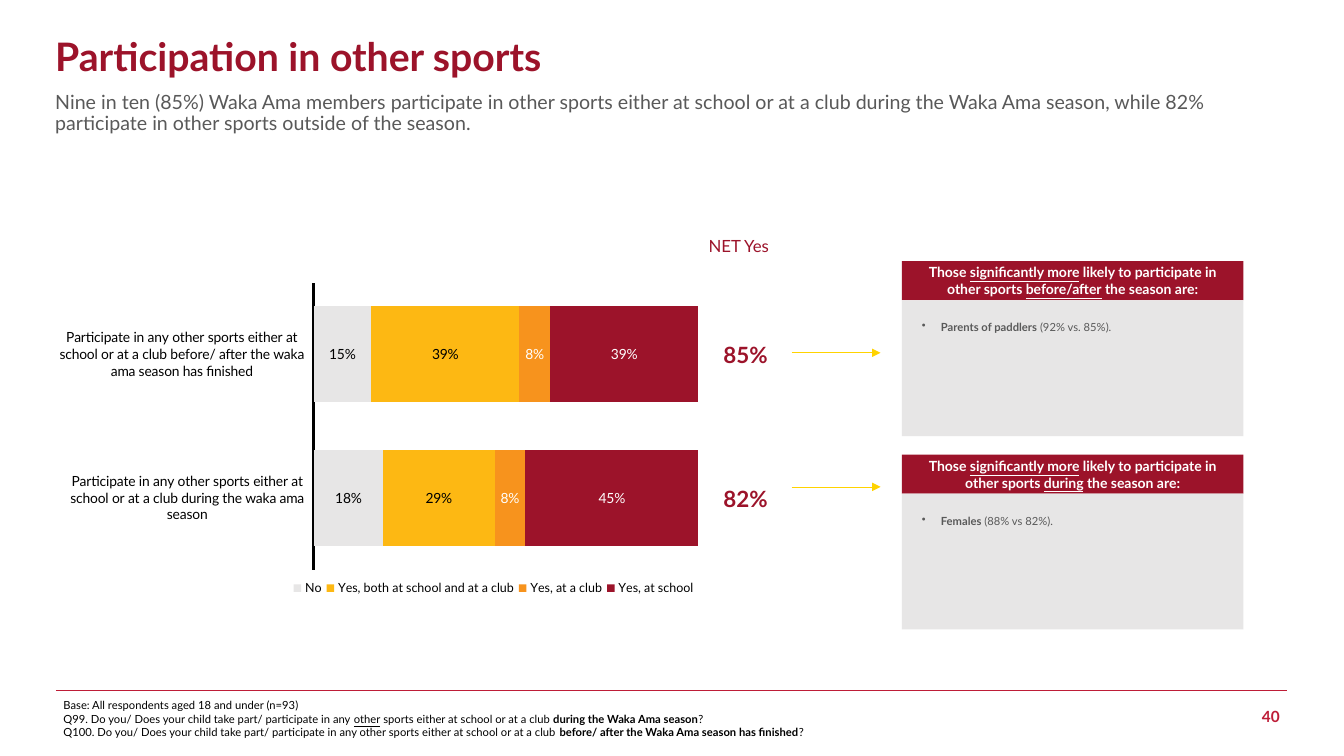
from lxml import etree
from pptx import Presentation
from pptx.chart.data import CategoryChartData
from pptx.dml.color import RGBColor
from pptx.enum.chart import XL_CHART_TYPE, XL_LABEL_POSITION, XL_LEGEND_POSITION, XL_TICK_LABEL_POSITION, XL_TICK_MARK
from pptx.enum.shapes import MSO_CONNECTOR, MSO_SHAPE
from pptx.enum.text import MSO_ANCHOR, PP_ALIGN
from pptx.oxml import parse_xml
from pptx.oxml.ns import nsdecls, qn
from pptx.util import Pt

LEFT, CENTER, RIGHT = PP_ALIGN.LEFT, PP_ALIGN.CENTER, PP_ALIGN.RIGHT
TOP, MIDDLE, BOTTOM = MSO_ANCHOR.TOP, MSO_ANCHOR.MIDDLE, MSO_ANCHOR.BOTTOM
CRIMSON = RGBColor(0x9C, 0x13, 0x2A)
RED = RGBColor(0xBE, 0x1D, 0x37)
GOLD = RGBColor(0xFD, 0xB8, 0x13)
ORANGE = RGBColor(0xF7, 0x93, 0x1D)
YELLOW = RGBColor(0xFF, 0xD3, 0x00)
LIGHT_GRAY = RGBColor(0xE7, 0xE6, 0xE6)
DARK_GRAY = RGBColor(0x59, 0x59, 0x59)
BLACK = RGBColor(0, 0, 0)
WHITE = RGBColor(0xFF, 0xFF, 0xFF)
FONT = "Lato"

presentation = Presentation()
presentation.slide_width, presentation.slide_height = Pt(960), Pt(540)
slide = presentation.slides.add_slide(presentation.slide_layouts[6])


def add_text(box, paragraphs, size, color, fill=None, align=LEFT, anchor=TOP, inset=(7.2, 3.6), bold=None):
    position = [Pt(value) for value in box]
    if fill is None:
        shape = slide.shapes.add_textbox(*position)
    else:
        shape = slide.shapes.add_shape(MSO_SHAPE.RECTANGLE, *position)
        shape.shadow.inherit = False
        shape.fill.solid()
        shape.fill.fore_color.rgb = fill
        shape.line.fill.background()
    frame = shape.text_frame
    frame.word_wrap = True
    frame.vertical_anchor = anchor
    frame.margin_left = frame.margin_right = Pt(inset[0])
    frame.margin_top = frame.margin_bottom = Pt(inset[1])
    for index, runs in enumerate(paragraphs):
        paragraph = frame.add_paragraph() if index else frame.paragraphs[0]
        paragraph.alignment = align
        style_font(paragraph.font, size, color, bold)
        for text, style in runs:
            if style == "break":
                paragraph.add_line_break()
                continue
            run = paragraph.add_run()
            run.text = text
            if style == "underline":
                run.font.underline = True
            elif style == "bold":
                run.font.bold = True
    return frame


def style_font(font, size, color, bold=None):
    font.name, font.size, font.bold = FONT, Pt(size), bold
    font.color.rgb = color


add_text((747, 502, 170, 19), [[("40", "")]], 11, RED, align=RIGHT, inset=(2.9, 2.9), bold=True)
footer_rule = slide.shapes.add_connector(MSO_CONNECTOR.STRAIGHT, Pt(40), Pt(493.2), Pt(919), Pt(493.2))
footer_rule.line.color.rgb = RED
footer_rule.line.width = Pt(1)

title = add_text((32.4, 1.4, 903, 59), [[("Participation in other sports", "")]], 28, CRIMSON, anchor=BOTTOM, bold=True)
title.paragraphs[0].line_spacing = 0.9
subtitle = add_text(
    (32.4, 62.6, 875.5, 52),
    [[("Nine in ten (85%) Waka Ama members participate in other sports either at school or at a club "
       "during the Waka Ama season, while 82% participate in other sports outside of the season.", "")]],
    14, DARK_GRAY)
subtitle.paragraphs[0].line_spacing = 0.9

chart_data = CategoryChartData(number_format="0%")
chart_data.categories = [
    "Participate in any other sports either at school or at a club before/ after the waka ama season has finished",
    "Participate in any other sports either at school or at a club during the waka ama season",
]
answers = [
    ("No", (0.15, 0.18), LIGHT_GRAY, BLACK),
    ("Yes, both at school and at a club", (0.39, 0.29), GOLD, BLACK),
    ("Yes, at a club", (0.08, 0.08), ORANGE, WHITE),
    ("Yes, at school", (0.39, 0.45), CRIMSON, WHITE),
]
for name, values, _, _ in answers:
    chart_data.add_series(name, values)
chart = slide.shapes.add_chart(
    XL_CHART_TYPE.BAR_STACKED_100, Pt(42.5), Pt(143.3), Pt(456.5), Pt(293), chart_data).chart
style_font(chart.font, 10, BLACK)
chart.has_title = False
plot = chart.plots[0]
plot.gap_width, plot.overlap, plot.vary_by_categories = 50, 100, False
for series, (_, _, color, label_color) in zip(plot.series, answers):
    series.format.fill.solid()
    series.format.fill.fore_color.rgb = color
    labels = series.data_labels
    labels.show_value = True
    labels.position = XL_LABEL_POSITION.CENTER
    labels.number_format, labels.number_format_is_linked = "0%", False
    style_font(labels.font, 10, label_color)
category_axis = chart.category_axis
category_axis.reverse_order = True
category_axis.major_tick_mark = XL_TICK_MARK.NONE
category_axis.tick_label_position = XL_TICK_LABEL_POSITION.LOW
category_axis.format.line.color.rgb = BLACK
category_axis.format.line.width = Pt(2)
value_axis = chart.value_axis
value_axis.visible = False
value_axis.has_major_gridlines = False
value_axis.minimum_scale, value_axis.maximum_scale = 0, 1
chart.has_legend = True
legend = chart.legend
legend.position = XL_LEGEND_POSITION.BOTTOM
legend.include_in_layout = False
style_font(legend.font, 9, BLACK)

plot_area = chart.element.find(".//" + qn("c:plotArea"))
legend_position = chart.element.find(".//" + qn("c:legendPos"))
for old_layout in plot_area.findall(qn("c:layout")) + legend_position.getparent().findall(qn("c:layout")):
    old_layout.getparent().remove(old_layout)
for target, bounds in (("inner", (0.39, 0.2, 0.61, 0.7)), ("", (0.35, 0.91, 0.65, 0.07))):
    tags = [("layoutTarget", target)] if target else []
    tags += [("xMode", "edge"), ("yMode", "edge"), *zip("xywh", bounds)]
    content = "".join(f'<c:{tag} val="{value}"/>' for tag, value in tags)
    layout = parse_xml(f'<c:layout {nsdecls("c")}><c:manualLayout>{content}</c:manualLayout></c:layout>')
    if target:
        plot_area.insert(0, layout)
    else:
        legend_position.addnext(layout)

table = slide.shapes.add_table(3, 1, Pt(499), Pt(165), Pt(67), Pt(242.7)).table
table.first_row = table.horz_banding = False
net_rows = [("NET Yes", 36.7, 12, False, LEFT, TOP), ("85%", 103, 16, True, CENTER, MIDDLE), ("82%", 103, 16, True, CENTER, MIDDLE)]
for index, (text, height, size, bold, align, anchor) in enumerate(net_rows):
    table.rows[index].height = Pt(height)
    cell = table.cell(index, 0)
    cell.fill.solid()
    cell.fill.fore_color.rgb = WHITE
    cell.vertical_anchor = anchor
    cell.text = text
    paragraph = cell.text_frame.paragraphs[0]
    paragraph.alignment = align
    style_font(paragraph.font, size, CRIMSON, bold)

callouts = [
    (186.5, 252, "before/after", "Parents of paddlers ", "(92% vs. 85%)."),
    (324.7, 347.8, "during", "Females ", "(88% vs 82%)."),
]
connectors = [footer_rule]
for top, arrow_y, period, group, figures in callouts:
    arrow = slide.shapes.add_connector(MSO_CONNECTOR.STRAIGHT, Pt(565.5), Pt(arrow_y), Pt(629), Pt(arrow_y))
    arrow.line.color.rgb = YELLOW
    arrow.line.width = Pt(0.5)
    etree.SubElement(arrow.line._get_or_add_ln(), qn("a:tailEnd"), type="triangle")
    connectors.append(arrow)
    add_text(
        (644.2, top, 244, 28),
        [[("Those ", ""), ("significantly more", "underline"), (" likely to participate in other sports ", ""),
          (period, "underline"), (" the season are:", "")]],
        10, WHITE, CRIMSON, CENTER, MIDDLE, (14.4, 14.4), True)
    body = add_text((644.2, top + 28, 244, 97), [[(group, "bold"), (figures, "")]], 8, DARK_GRAY, LIGHT_GRAY, inset=(14.4, 14.4))
    body.paragraphs[0].space_after = Pt(6)
    properties = body.paragraphs[0]._p.get_or_add_pPr()
    properties.set("marL", str(Pt(13.5)))
    properties.set("indent", str(-Pt(13.5)))
    bullet = etree.Element(qn("a:buChar"), char="•")
    properties.find(qn("a:spcAft")).addnext(bullet)
for connector in connectors:
    etree.SubElement(connector._element.spPr, qn("a:effectLst"))

add_text(
    (38.2, 495.4, 575, 44.6),
    [[("Base: All respondents aged 18 and under (n=93)", ""), ("", "break"),
      ("Q99. Do you/ Does your child take part/ participate in any ", ""), ("other", "underline"),
      (" sports either at school or at a club ", ""), ("during the Waka Ama season", "bold"), ("?", "")],
     [("Q100. Do you/ Does your child take part/ participate in any other sports either at school or at a club ", ""),
      ("before/ after the Waka Ama season has finished", "bold"), ("?", "")]],
    8, BLACK, WHITE)

presentation.save("out.pptx")
